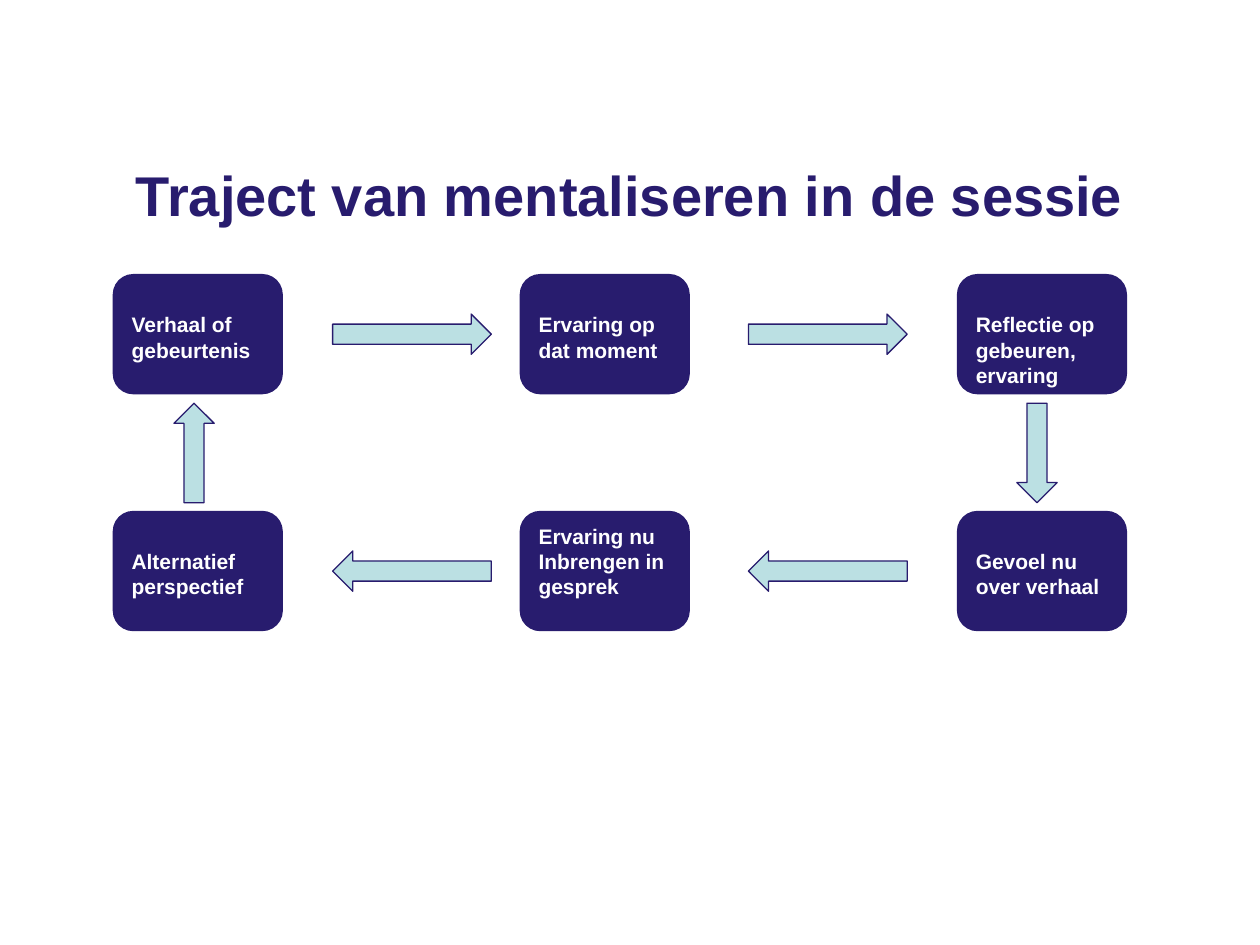
"""Build a slide showing the cycle of mentalising within a session."""
from dataclasses import dataclass

from pptx import Presentation
from pptx.dml.color import RGBColor
from pptx.enum.shapes import MSO_SHAPE
from pptx.enum.text import MSO_ANCHOR, PP_ALIGN
from pptx.util import Inches, Pt

COLORS = {"navy": "281C6E", "ice": "BBE0E3", "white": "FFFFFF"}
WIDTH, HEIGHT = 10, 7.5
COLUMNS = (0.9, 4.13, 7.6)
ROWS = (2.18, 4.06)
STEP_WIDTH, STEP_HEIGHT = 1.34, 0.945
ARROW_LONG, ARROW_SHORT, ARROW_THICK = 1.26, 0.79, 0.32
ARROW_COLUMNS = (2.64, 5.94)
ARROW_ROW = 3.2
INSET, LINE_HEIGHT = 0.05, 0.2


@dataclass(frozen=True)
class Step:
    column: int
    row: int
    lines: tuple[str, ...]
    lines_above: int = 1


@dataclass(frozen=True)
class Arrow:
    direction: MSO_SHAPE
    left: float
    top: float
    width: float
    height: float


def across(direction: MSO_SHAPE, gap: int, row: int) -> Arrow:
    """Place an arrow in a gap between two columns, centred on a row."""
    top = ROWS[row] + (STEP_HEIGHT - ARROW_THICK) / 2
    return Arrow(direction, ARROW_COLUMNS[gap], top, ARROW_LONG, ARROW_THICK)


def between_rows(direction: MSO_SHAPE, left: float) -> Arrow:
    """Place an arrow between the two rows."""
    return Arrow(direction, left, ARROW_ROW, ARROW_THICK, ARROW_SHORT)


STEPS = (
    Step(0, 0, ("Verhaal of", "gebeurtenis")),
    Step(1, 0, ("Ervaring op dat moment",)),
    Step(2, 0, ("Reflectie op gebeuren, ervaring",)),
    Step(2, 1, ("Gevoel nu over verhaal",)),
    Step(1, 1, ("Ervaring nu Inbrengen in gesprek",), lines_above=0),
    Step(0, 1, ("Alternatief perspectief",)),
)
ARROWS = (
    across(MSO_SHAPE.RIGHT_ARROW, 0, 0),
    across(MSO_SHAPE.RIGHT_ARROW, 1, 0),
    between_rows(MSO_SHAPE.DOWN_ARROW, 8.07),
    across(MSO_SHAPE.LEFT_ARROW, 1, 1),
    across(MSO_SHAPE.LEFT_ARROW, 0, 1),
    between_rows(MSO_SHAPE.UP_ARROW, 1.38),
)


def write(frame, lines: tuple[str, ...], size: int, color: str, align: PP_ALIGN) -> None:
    """Write one bold paragraph per line."""
    frame.word_wrap = True
    frame.text = "\n".join(lines)
    for paragraph in frame.paragraphs:
        paragraph.alignment = align
        font = paragraph.font
        font.name, font.size, font.bold = "Arial", Pt(size), True
        font.color.rgb = RGBColor.from_string(COLORS[color])


def add_outlined(slide, preset: MSO_SHAPE, box: tuple[float, ...], fill: str):
    """Add a filled preset shape with a thin navy outline."""
    shape = slide.shapes.add_shape(preset, *map(Inches, box))
    shape.shadow.inherit = False
    shape.fill.solid()
    shape.fill.fore_color.rgb = RGBColor.from_string(COLORS[fill])
    shape.line.color.rgb = RGBColor.from_string(COLORS["navy"])
    shape.line.width = Pt(0.75)
    return shape


def add_title(slide, title: str) -> None:
    """Add the centred heading."""
    left, width = 0.075 * WIDTH, 0.85 * WIDTH
    heading = slide.shapes.add_textbox(*map(Inches, (left, 1.31, width, 0.55)))
    heading.text_frame.vertical_anchor = MSO_ANCHOR.BOTTOM
    write(heading.text_frame, (title,), 32, "navy", PP_ALIGN.CENTER)


def add_step(slide, step: Step) -> None:
    """Add one rounded step at its place in the grid."""
    box = (COLUMNS[step.column], ROWS[step.row], STEP_WIDTH, STEP_HEIGHT)
    frame = add_outlined(slide, MSO_SHAPE.ROUNDED_RECTANGLE, box, "navy").text_frame
    frame.vertical_anchor = MSO_ANCHOR.TOP
    frame.margin_top = Inches(INSET + step.lines_above * LINE_HEIGHT)
    frame.margin_bottom = 0
    write(frame, step.lines, 12, "white", PP_ALIGN.LEFT)


def add_arrow(slide, arrow: Arrow) -> None:
    """Add one block arrow."""
    box = (arrow.left, arrow.top, arrow.width, arrow.height)
    add_outlined(slide, arrow.direction, box, "ice")


def main() -> None:
    """Create and save the presentation."""
    presentation = Presentation()
    presentation.slide_width = Inches(WIDTH)
    presentation.slide_height = Inches(HEIGHT)
    slide = presentation.slides.add_slide(presentation.slide_layouts[6])
    add_title(slide, "Traject van mentaliseren in de sessie")
    for step in STEPS:
        add_step(slide, step)
    for arrow in ARROWS:
        add_arrow(slide, arrow)
    presentation.save("out.pptx")


if __name__ == "__main__":
    main()
